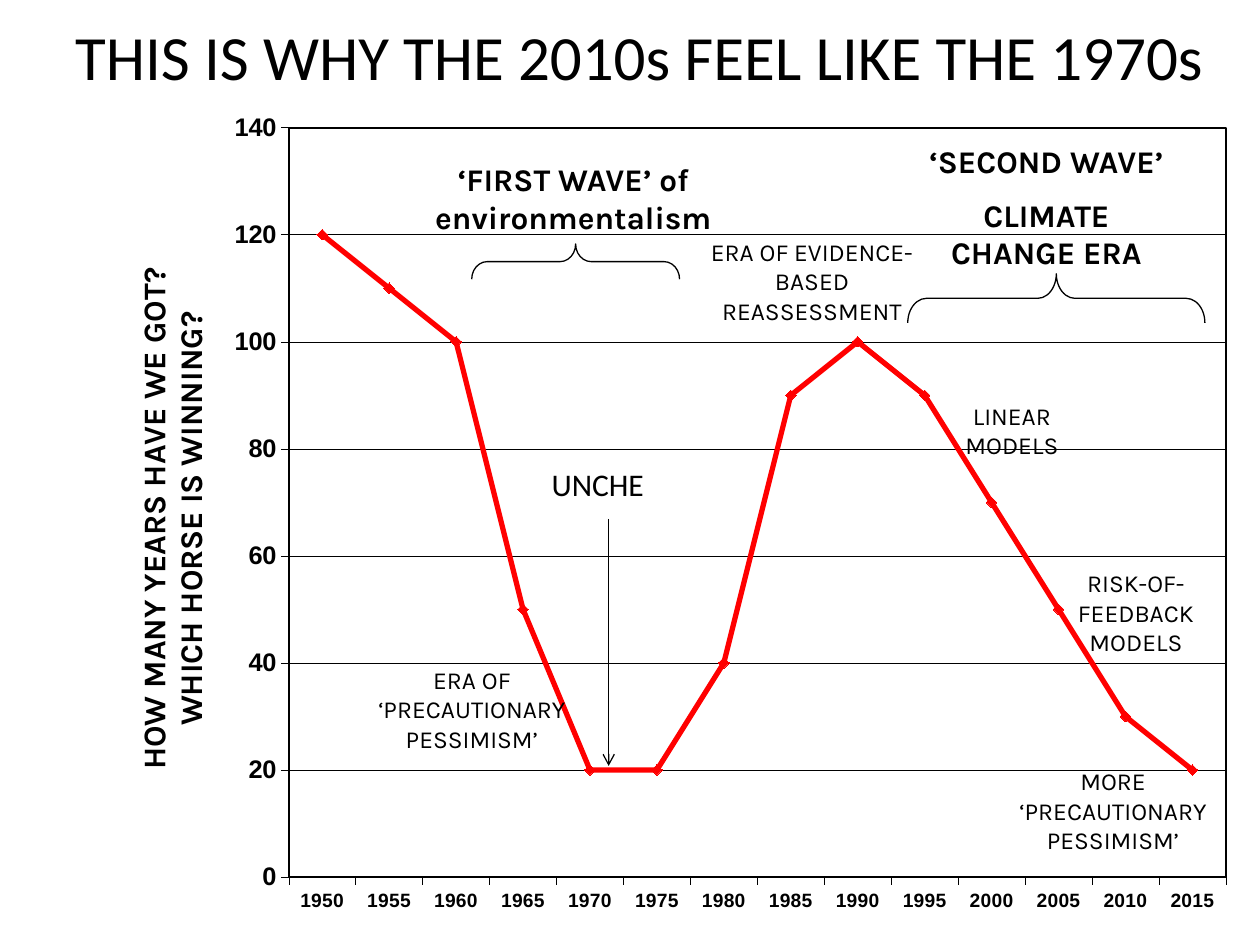
import pptx
import pptx.chart.data
import pptx.dml.color
import pptx.enum.chart
import pptx.enum.shapes
import pptx.enum.text
import pptx.oxml
import pptx.oxml.ns
import pptx.util
from pptx.util import Cm, Pt

BLACK = pptx.dml.color.RGBColor(0x00, 0x00, 0x00)
RED = pptx.dml.color.RGBColor(0xFF, 0x00, 0x00)
CENTER = pptx.enum.text.PP_ALIGN.CENTER

YEARS_LEFT = [120, 110, 100, 50, 20, 20, 40, 90, 100, 90, 70, 50, 30, 20]
START_YEAR, YEAR_STEP = 1950, 5

# text, then left, top, width, height in cm
WAVES = [
    ("‘FIRST WAVE’ of environmentalism", 8.46, 3.1, 6.2, 1.8),
    ("‘SECOND WAVE’\nCLIMATE CHANGE ERA", 18.29, 2.74, 5.61, 2.95),
]
ERAS = [
    ("LINEAR MODELS", 18.8, 7.95, 3.2, 1.45),
    ("RISK-OF-FEEDBACK MODELS", 20.6, 11.33, 4.6, 2.06),
    ("ERA OF ‘PRECAUTIONARY PESSIMISM’", 6.91, 13.28, 5.21, 2.06),
    ("ERA OF EVIDENCE-BASED REASSESSMENT", 14.07, 4.65, 4.6, 2.06),
    ("MORE ‘PRECAUTIONARY PESSIMISM’", 19.99, 15.32, 4.9, 2.06),
]
# left, top, width, height in cm before rotation, then curl of the ends
BRACES = [
    (11.25, 3.18, 0.71, 4.19, 0.44),
    (20.8, 3.02, 0.99, 5.99, 0.38),
]


def style_font(font, name, size, bold=False):
    font.name, font.size, font.bold = name, Pt(size), bold
    font.color.rgb = BLACK


def style_line(line, width, color=BLACK):
    line.color.rgb = color
    line.width = Pt(width)


def add_text(slide, text, left, top, width, height, *, font="Karla", size=14,
             bold=False, align=CENTER, anchor=pptx.enum.text.MSO_ANCHOR.TOP):
    box = slide.shapes.add_textbox(Cm(left), Cm(top), Cm(width), Cm(height))
    frame = box.text_frame
    frame.word_wrap = True
    frame.vertical_anchor = anchor
    frame.text = text
    for paragraph in frame.paragraphs:
        paragraph.alignment = align
        paragraph.space_before = Pt(size / 2)
        style_font(paragraph.runs[0].font, font, size, bold)


def add_brace(slide, left, top, width, height, curl):
    """Add a curly brace lying on its side with the tip upwards."""
    brace = slide.shapes.add_shape(pptx.enum.shapes.MSO_SHAPE.LEFT_BRACE,
                                   Cm(left), Cm(top), Cm(width), Cm(height))
    brace.shadow.inherit = False
    brace.fill.background()
    style_line(brace.line, 0.75)
    brace.adjustments[0] = curl
    brace.rotation = 270
    brace._element.spPr.find(pptx.oxml.ns.qn("a:xfrm")).set("flipH", "1")


def add_arrow(slide, x, top, bottom):
    arrow = slide.shapes.add_connector(pptx.enum.shapes.MSO_CONNECTOR.STRAIGHT,
                                       Cm(x), Cm(top), Cm(x), Cm(bottom))
    style_line(arrow.line, 0.75)
    namespace = pptx.oxml.ns.nsdecls("a")
    arrow.line._get_or_add_ln().append(
        pptx.oxml.parse_xml(f'<a:tailEnd {namespace} type="arrow"/>'))
    arrow._element.spPr.append(pptx.oxml.parse_xml(f"<a:effectLst {namespace}/>"))


def chart_layout(x, y, size=None):
    """Return a c:layout placed by fractions of the chart's area."""
    values = {"x": x, "y": y}
    target = ""
    if size:
        values["w"], values["h"] = size
        target = '<c:layoutTarget val="inner"/>'
    modes = '<c:xMode val="edge"/><c:yMode val="edge"/>'
    places = "".join(f'<c:{key} val="{value}"/>' for key, value in values.items())
    return pptx.oxml.parse_xml(
        f'<c:layout {pptx.oxml.ns.nsdecls("c")}><c:manualLayout>'
        f"{target}{modes}{places}</c:manualLayout></c:layout>")


def replace_layout(parent, layout, position):
    for old in parent.findall(pptx.oxml.ns.qn("c:layout")):
        parent.remove(old)
    parent.insert(position, layout)


def frame_plot(chart):
    """Place the plot area and draw a border around it."""
    plot_area = chart._chartSpace.chart.plotArea
    replace_layout(plot_area, chart_layout(0.186, 0.046, (0.804, 0.875)), 0)
    plot_area.append(pptx.oxml.parse_xml(
        f'<c:spPr {pptx.oxml.ns.nsdecls("c", "a")}><a:noFill/><a:ln w="{Pt(1)}">'
        f'<a:solidFill><a:srgbClr val="{BLACK}"/></a:solidFill></a:ln></c:spPr>'))


def style_axis(axis, size):
    axis.major_tick_mark = pptx.enum.chart.XL_TICK_MARK.OUTSIDE
    axis.minor_tick_mark = pptx.enum.chart.XL_TICK_MARK.NONE
    style_line(axis.format.line, 0.25)
    style_font(axis.tick_labels.font, "Arial", size, bold=True)


def add_axis_title(axis, text):
    title = axis.axis_title
    title.text_frame.text = text
    title.text_frame._txBody.bodyPr.set("rot", "-5400000")
    title.text_frame._txBody.bodyPr.set("vert", "horz")
    for paragraph in title.text_frame.paragraphs:
        paragraph.alignment = CENTER
        style_font(paragraph.runs[0].font, "Karla", 18, bold=True)
    replace_layout(title._element, chart_layout(0.05, 0.205), 1)


def add_years_chart(slide):
    data = pptx.chart.data.CategoryChartData()
    data.categories = [str(START_YEAR + YEAR_STEP * i) for i in range(len(YEARS_LEFT))]
    data.add_series("Series 1", YEARS_LEFT)
    chart = slide.shapes.add_chart(
        pptx.enum.chart.XL_CHART_TYPE.LINE_MARKERS,
        Cm(1.45), Cm(1.78), Cm(23.5), Cm(17.27), data).chart
    chart.has_legend = False
    chart.has_title = False
    style_font(chart.font, "Arial", 25.2, bold=True)
    chart.plots[0].vary_by_categories = False

    style_axis(chart.category_axis, 11)
    years = chart.value_axis
    style_axis(years, 14.5)
    years.minimum_scale, years.maximum_scale, years.major_unit = 0, 140, 20
    years.has_major_gridlines = True
    style_line(years.major_gridlines.format.line, 0.25)
    add_axis_title(years, "HOW MANY YEARS HAVE WE GOT?\nWHICH HORSE IS WINNING?")
    frame_plot(chart)

    trend = chart.plots[0].series[0]
    trend.smooth = False
    style_line(trend.format.line, 3, RED)
    trend.marker.style = pptx.enum.chart.XL_MARKER_STYLE.DIAMOND
    trend.marker.size = 6
    trend.marker.format.fill.solid()
    trend.marker.format.fill.fore_color.rgb = RED
    style_line(trend.marker.format.line, 0.75, RED)


def main():
    deck = pptx.Presentation()
    deck.slide_width, deck.slide_height = Cm(25.4), Cm(19.05)
    slide = deck.slides.add_slide(deck.slide_layouts[6])

    add_years_chart(slide)
    for brace in BRACES:
        add_brace(slide, *brace)
    for wave in WAVES:
        add_text(slide, *wave, size=18, bold=True)
    for era in ERAS:
        add_text(slide, *era)
    add_text(slide, "THIS IS WHY THE 2010s FEEL LIKE THE 1970s",
             0.89, -0.48, 24, 3.18, font="Calibri", size=36,
             anchor=pptx.enum.text.MSO_ANCHOR.MIDDLE)
    add_text(slide, "UNCHE", 10.87, 9.25, 3, 1.02, font="Calibri", size=18,
             align=pptx.enum.text.PP_ALIGN.LEFT)
    add_arrow(slide, 12.27, 10.46, 15.44)

    deck.save("out.pptx")


if __name__ == "__main__":
    main()
